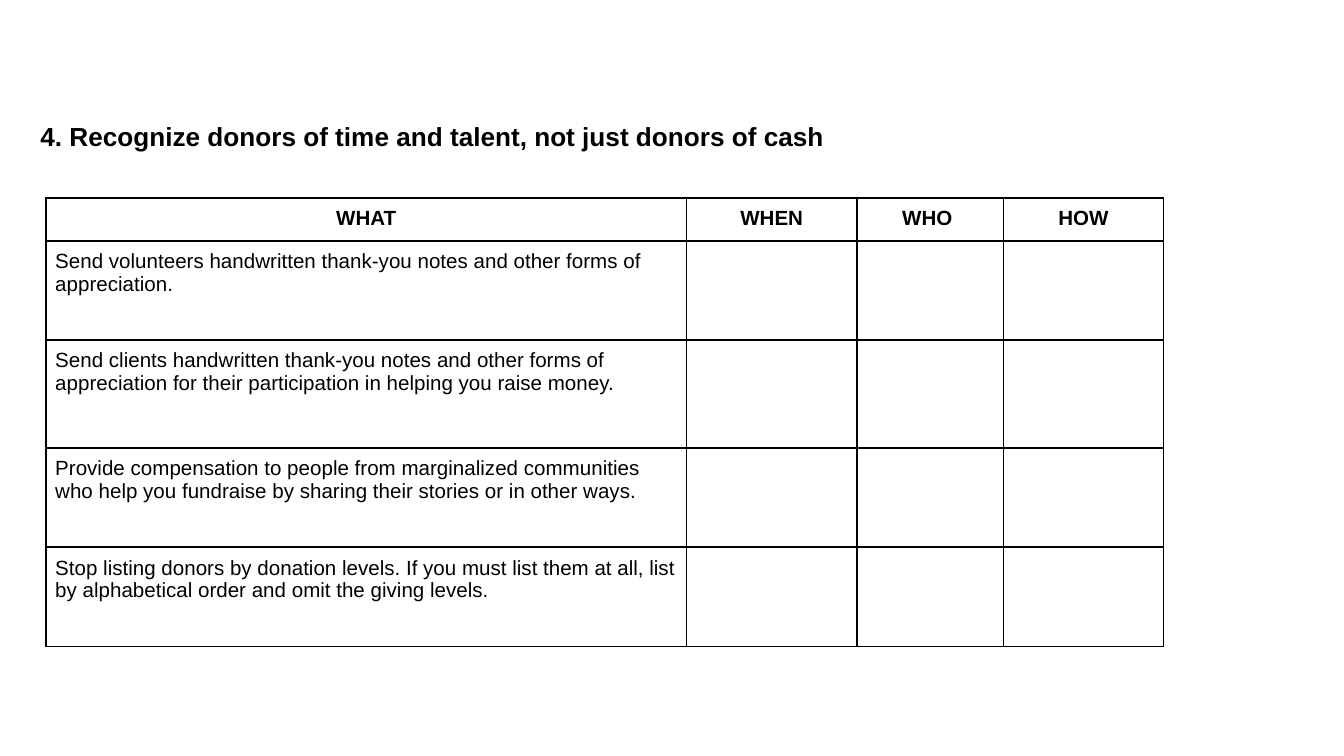
from lxml import etree
from pptx import Presentation
from pptx.dml.color import RGBColor
from pptx.enum import text
from pptx.oxml import ns
from pptx.util import Pt

INK = "000000"
HEADS = ["WHAT", "WHEN", "WHO ", "HOW"]
TASKS = [
    "Send volunteers handwritten thank-you notes and other forms of appreciation.",
    "Send clients handwritten thank-you notes and other forms of appreciation "
    "for their participation in helping you raise money.",
    "Provide compensation to people from marginalized communities who help you "
    "fundraise by sharing their stories or in other ways.",
    "Stop listing donors by donation levels. If you must list them at all, list "
    "by alphabetical order and omit the giving levels.",
]
WIDTHS = [343.2, 91.3, 78.5, 85.8]
HEIGHTS = [23, 53.2, 57.8, 53.2, 53.2]


def color(code):
    return RGBColor.from_string(code)


class Deck:
    def __init__(self, slide, font="Arial", ink=INK):
        self.slide, self.font, self.ink = slide, font, ink

    def label(self, frame, words, size, bold=False, align=text.PP_ALIGN.LEFT):
        para = frame.paragraphs[0]
        para.alignment = align
        run = para.add_run()
        run.text = words
        run.font.name = self.font
        run.font.size = Pt(size)
        run.font.bold = bold
        run.font.color.rgb = color(self.ink)

    def title(self, words, left, top, width, height):
        shape = self.slide.shapes.title
        shape.left, shape.top = Pt(left), Pt(top)
        shape.width, shape.height = Pt(width), Pt(height)
        frame = shape.text_frame
        frame.word_wrap = True
        frame.vertical_anchor = text.MSO_ANCHOR.MIDDLE
        self.label(frame, words, 14, bold=True)

    def border(self, cell, width=1):
        """Draw all four sides; line elements must precede the fill."""
        props = cell._tc.get_or_add_tcPr()
        for spot, side in enumerate(("lnL", "lnR", "lnT", "lnB")):
            line = etree.Element(ns.qn(f"a:{side}"), w=str(Pt(width)))
            fill = etree.SubElement(line, ns.qn("a:solidFill"))
            etree.SubElement(fill, ns.qn("a:srgbClr"), val=self.ink)
            props.insert(spot, line)

    def table(self, rows, left, top, widths, heights, pad=5):
        table = self.slide.shapes.add_table(
            len(heights), len(widths), Pt(left), Pt(top),
            Pt(sum(widths)), Pt(sum(heights))).table
        table.horz_banding = False
        for col, width in zip(table.columns, widths):
            col.width = Pt(width)
        for row, height in zip(table.rows, heights):
            row.height = Pt(height)
        for cell in table.iter_cells():
            cell.fill.background()
            cell.margin_left = cell.margin_right = Pt(pad)
            cell.margin_top = cell.margin_bottom = Pt(pad)
            self.border(cell)
        for r, row in enumerate(rows):
            head = r == 0
            align = text.PP_ALIGN.CENTER if head else text.PP_ALIGN.LEFT
            for c, words in enumerate(row):
                self.label(table.cell(r, c).text_frame, words, 11, head, align)


def main():
    show = Presentation()
    show.slide_width, show.slide_height = Pt(720), Pt(405)
    deck = Deck(show.slides.add_slide(show.slide_layouts[5]))
    deck.title("4. Recognize donors of time and talent, not just donors of cash",
               14.4, 60.5, 499, 24.5)
    deck.table([HEADS] + [[task] for task in TASKS], 24.6, 106, WIDTHS, HEIGHTS)
    show.save("out.pptx")


if __name__ == "__main__":
    main()
